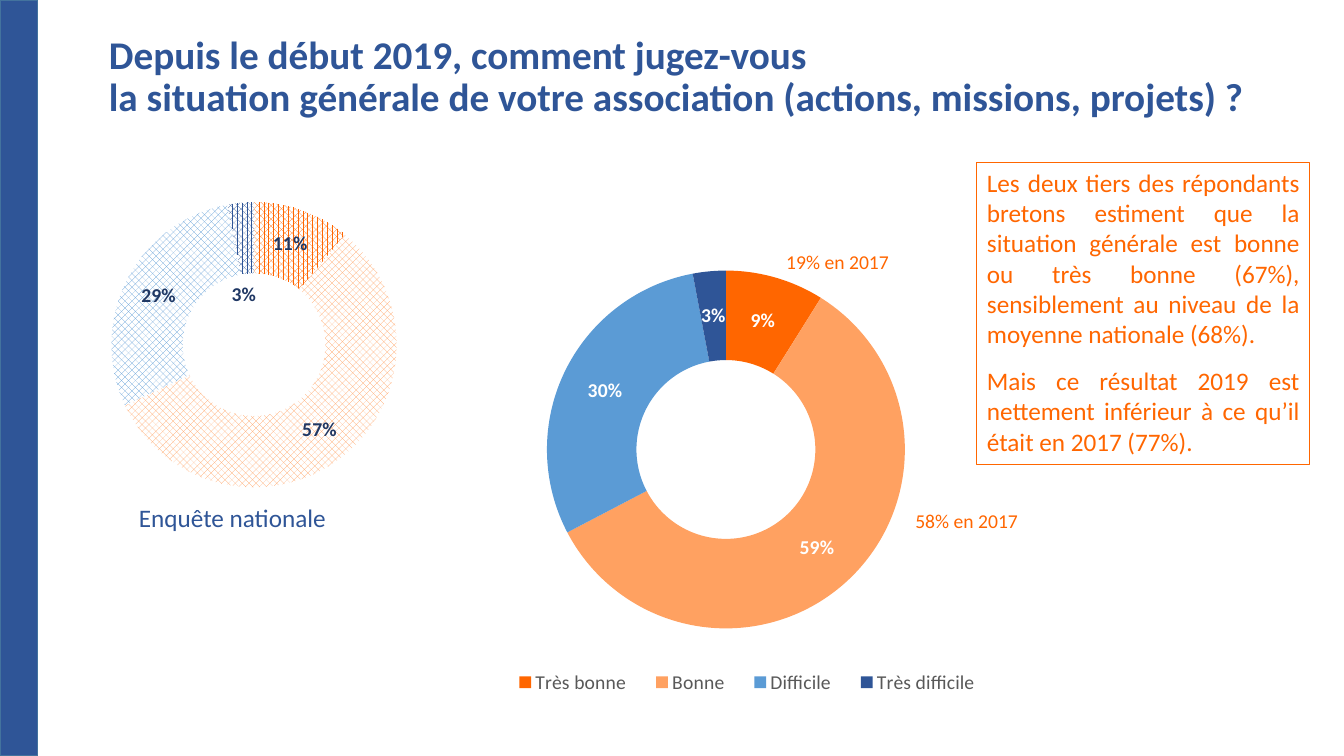
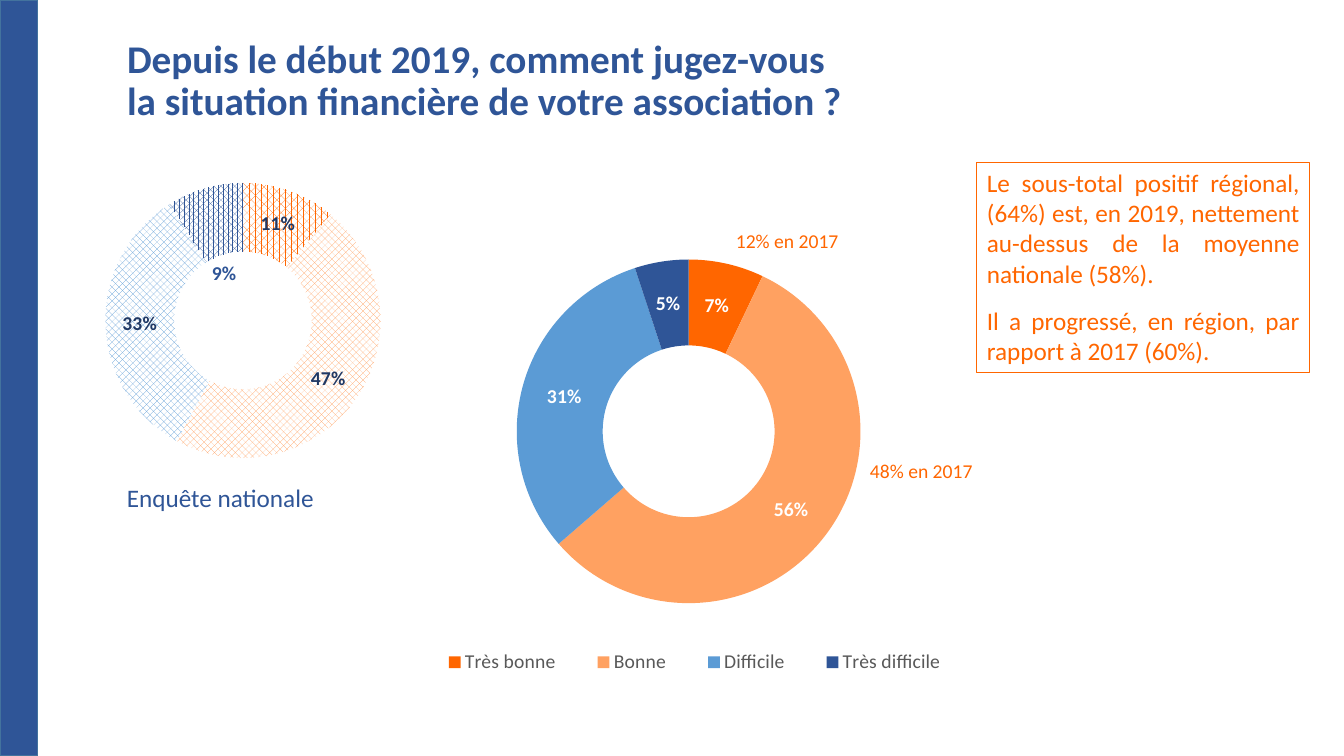
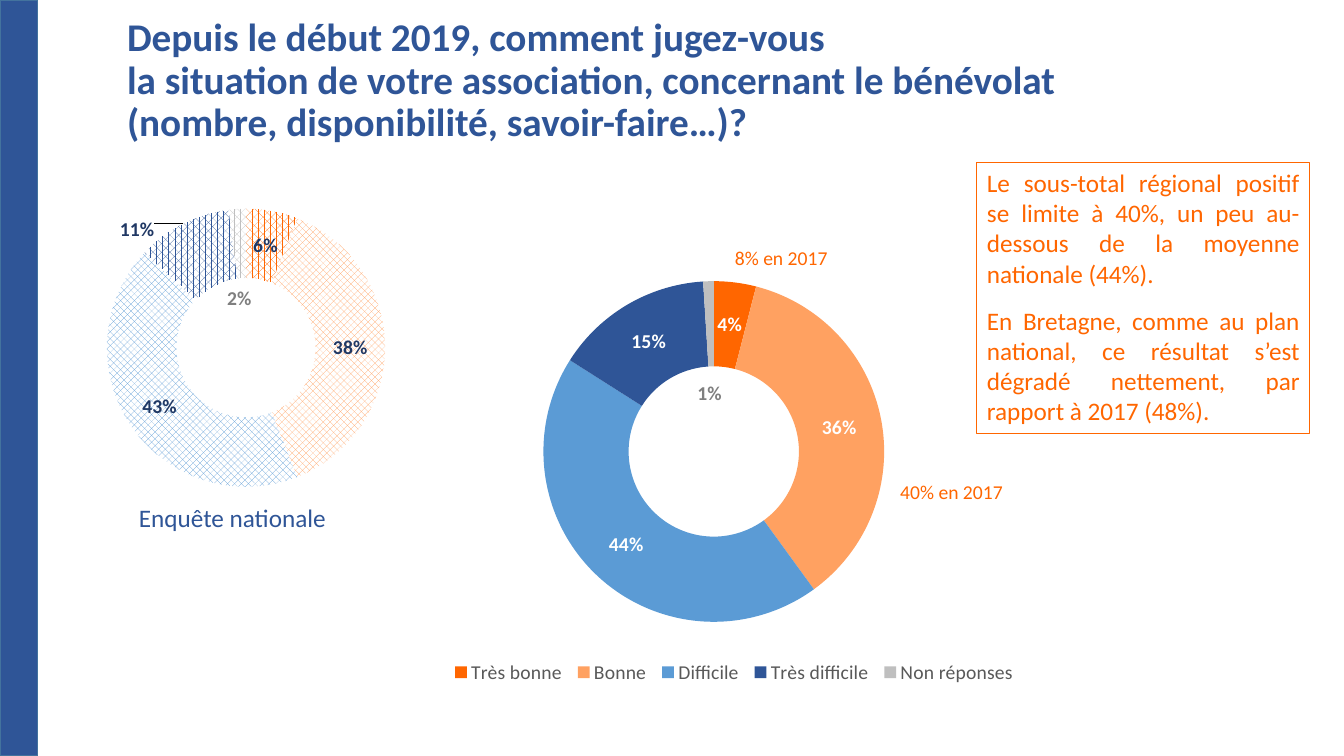
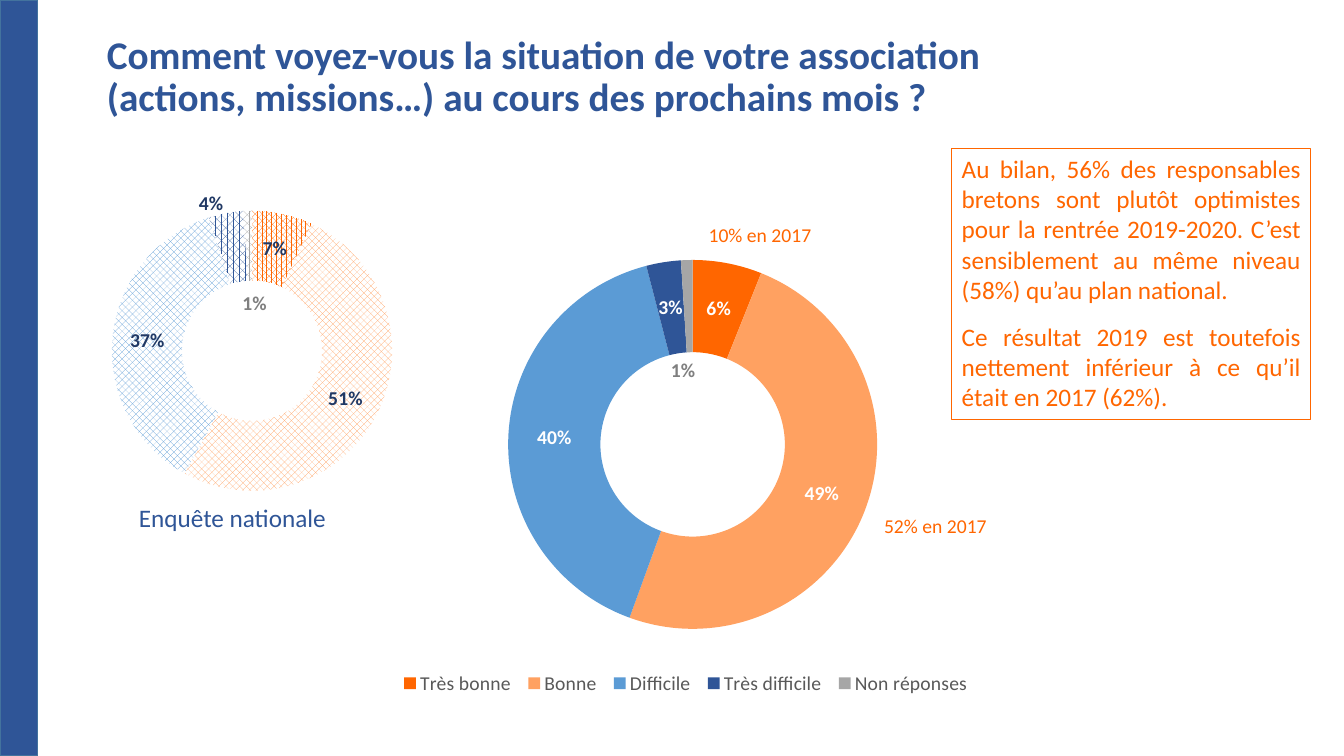
from dataclasses import dataclass
from typing import Optional

from pptx import Presentation
from pptx.chart.chart import Chart
from pptx.chart.data import CategoryChartData
from pptx.dml.color import RGBColor
from pptx.enum.chart import XL_CHART_TYPE as ChartType, XL_LEGEND_POSITION as LegendPosition
from pptx.enum.dml import MSO_PATTERN_TYPE as Pattern
from pptx.enum.shapes import MSO_SHAPE as Shape
from pptx.enum.text import MSO_ANCHOR as Anchor, MSO_AUTO_SIZE as AutoSize, PP_ALIGN as Align
from pptx.oxml import parse_xml
from pptx.oxml.ns import nsdecls
from pptx.slide import Slide
from pptx.text.text import Font
from pptx.util import Inches, Pt

NAVY = RGBColor(0x2F, 0x55, 0x97)
DARK_NAVY = RGBColor(0x20, 0x38, 0x64)
BAND_EDGE = RGBColor(0x43, 0x73, 0x9E)
BLUE = RGBColor(0x5B, 0x9B, 0xD5)
ORANGE = RGBColor(0xFF, 0x66, 0x00)
PEACH = RGBColor(0xFF, 0xA1, 0x61)
WHITE = RGBColor(0xFF, 0xFF, 0xFF)
LEGEND_GREY = RGBColor(0x59, 0x59, 0x59)
LABEL_GREY = RGBColor(0x7F, 0x7F, 0x7F)
LIGHT_GREY = RGBColor(0xBF, 0xBF, 0xBF)
MID_GREY = RGBColor(0xA6, 0xA6, 0xA6)

FONT = "Calibri"
ANSWERS = ("Très bonne", "Bonne", "Difficile", "Très difficile", "Non réponses")
ANSWER_COLORS = (ORANGE, PEACH, BLUE, NAVY)
PERCENT = '0"%";;'
P50, P60, P70 = Pattern.PERCENT_50, Pattern.PERCENT_60, Pattern.PERCENT_70


@dataclass(frozen=True)
class Box:
    """A rectangle in inches."""

    left: float
    top: float
    width: float
    height: float

    def lengths(self) -> tuple[Inches, Inches, Inches, Inches]:
        """Return the four sides as lengths."""
        return Inches(self.left), Inches(self.top), Inches(self.width), Inches(self.height)

    def within(self, frame: "Box") -> dict[str, float]:
        """Return this rectangle as fractions of a frame."""
        return {
            "x": (self.left - frame.left) / frame.width,
            "y": (self.top - frame.top) / frame.height,
            "w": self.width / frame.width,
            "h": self.height / frame.height,
        }


@dataclass(frozen=True)
class MovedLabel:
    """A percentage moved away from its ring segment, in inches."""

    answer: int
    right: float
    down: float
    color: RGBColor


@dataclass(frozen=True)
class Ring:
    """A doughnut of answers with its frame, centre and diameter."""

    values: tuple[int, ...]
    frame: Box
    center: tuple[float, float]
    diameter: float
    label_color: RGBColor = WHITE
    patterns: tuple[Pattern, ...] = ()
    moved: tuple[MovedLabel, ...] = ()
    legend: Optional[Box] = None

    def plot(self) -> Box:
        """Return the square around the ring."""
        x, y = self.center
        radius = self.diameter / 2
        return Box(x - radius, y - radius, self.diameter, self.diameter)


@dataclass(frozen=True)
class Note:
    """A short text at a left and top position."""

    text: str
    left: float
    top: float


@dataclass(frozen=True)
class Question:
    """One survey question with national and regional results."""

    title: tuple[str, ...]
    title_box: Box
    national: Ring
    regional: Ring
    caption: Note
    past_results: tuple[Note, Note]
    comment: tuple[str, str]
    comment_box: Box
    no_answer_color: RGBColor = LIGHT_GREY


def set_font(font: Font, size: float, color: RGBColor, bold: bool = False) -> None:
    """Apply the common typeface with a size and colour."""
    font.name = FONT
    font.size = Pt(size)
    font.bold = bold
    font.color.rgb = color


def set_layout(parent, index: int, inner: bool = False, **fractions: float) -> None:
    """Give a chart part a manual layout."""
    for old in parent.xpath("c:layout"):
        parent.remove(old)
    target = '<c:layoutTarget val="inner"/>' if inner else ""
    edges = "".join(f'<c:{key}Mode val="edge"/>' for key in "xy" if "w" in fractions)
    values = "".join(f'<c:{key} val="{value:.4f}"/>' for key, value in fractions.items())
    parent.insert(index, parse_xml(
        f'<c:layout {nsdecls("c")}><c:manualLayout>{target}{edges}{values}</c:manualLayout></c:layout>'
    ))


def add_legend(chart: Chart, box: Box, frame: Box) -> None:
    """Place the legend below the ring."""
    chart.has_legend = True
    chart.legend.position = LegendPosition.TOP
    chart.legend.include_in_layout = False
    set_font(chart.legend.font, 14, LEGEND_GREY)
    set_layout(chart.element.xpath(".//c:legend")[0], 1, **box.within(frame))


def add_ring(slide: Slide, ring: Ring, no_answer_color: RGBColor) -> None:
    """Draw a doughnut with its percentages."""
    data = CategoryChartData(number_format=PERCENT)
    data.categories = ANSWERS[:len(ring.values)]
    data.add_series("Series 1", ring.values)
    chart = slide.shapes.add_chart(ChartType.DOUGHNUT, *ring.frame.lengths(), data).chart
    chart.has_title = False
    chart.has_legend = False
    chart.font.name = FONT
    chart.font.size = Pt(14)
    set_layout(chart.element.xpath(".//c:plotArea")[0], 0, True, **ring.plot().within(ring.frame))

    plot = chart.plots[0]
    plot.vary_by_categories = True
    series = plot.series[0]
    labels = series.data_labels
    labels.show_value = True
    labels.number_format = PERCENT
    labels.number_format_is_linked = False
    set_font(labels.font, 14, ring.label_color, True)

    colors = (*ANSWER_COLORS, no_answer_color)
    for index in range(len(ring.values)):
        segment = series.points[index].format
        segment.line.fill.background()
        if ring.patterns:
            segment.fill.patterned()
            segment.fill.pattern = ring.patterns[index]
            segment.fill.fore_color.rgb = colors[index]
            segment.fill.back_color.rgb = WHITE
        else:
            segment.fill.solid()
            segment.fill.fore_color.rgb = colors[index]

    for label in ring.moved:
        set_font(series.points[label.answer].data_label.font, 14, label.color, True)
        element = chart.element.xpath(f'.//c:dLbl[c:idx/@val="{label.answer}"]')[0]
        set_layout(element, 1, x=label.right / ring.frame.width, y=label.down / ring.frame.height)
        element.insert(2, parse_xml(
            f'<c:numFmt {nsdecls("c")} formatCode="0&quot;%&quot;" sourceLinked="0"/>'
        ))
    if ring.legend:
        add_legend(chart, ring.legend, ring.frame)


def add_title(slide: Slide, lines: tuple[str, ...], box: Box) -> None:
    """Fill and place the title placeholder."""
    title = slide.shapes.title
    title.left, title.top, title.width, title.height = box.lengths()
    frame = title.text_frame
    frame.word_wrap = True
    frame.auto_size = AutoSize.NONE
    frame.vertical_anchor = Anchor.MIDDLE
    paragraph = frame.paragraphs[0]
    paragraph.alignment = Align.LEFT
    paragraph.line_spacing = 0.9
    for index, line in enumerate(lines):
        if index:
            paragraph.add_line_break()
        run = paragraph.add_run()
        run.text = line
        set_font(run.font, 28, NAVY, True)


def add_note(slide: Slide, note: Note, size: float, color: RGBColor, width: float) -> None:
    """Write a short text next to a ring."""
    box = Box(note.left, note.top, width, 0.34 if size < 18 else 0.4)
    frame = slide.shapes.add_textbox(*box.lengths()).text_frame
    frame.word_wrap = True
    run = frame.paragraphs[0].add_run()
    run.text = note.text
    set_font(run.font, size, color)


def add_comment(slide: Slide, texts: tuple[str, str], box: Box) -> None:
    """Draw the outlined comment with justified paragraphs."""
    comment = slide.shapes.add_shape(Shape.RECTANGLE, *box.lengths())
    comment.shadow.inherit = False
    comment.fill.background()
    comment.line.color.rgb = ORANGE
    comment.line.width = Pt(0.75)
    frame = comment.text_frame
    frame.word_wrap = True
    frame.vertical_anchor = Anchor.TOP
    for index, text in enumerate(texts):
        paragraph = frame.add_paragraph() if index else frame.paragraphs[0]
        paragraph.alignment = Align.JUSTIFY
        paragraph.space_before = Pt(12 * index)
        run = paragraph.add_run()
        run.text = text
        set_font(run.font, 18, ORANGE)


def add_master_band(deck: Presentation, slide: Slide) -> None:
    """Put the side band on the slide master."""
    band = slide.shapes.add_shape(Shape.RECTANGLE, 0, 0, Inches(0.37), deck.slide_height)
    band.shadow.inherit = False
    band.fill.solid()
    band.fill.fore_color.rgb = NAVY
    band.line.color.rgb = BAND_EDGE
    band.line.width = Pt(1)
    deck.slide_master.shapes.element.insert(2, band.element)


def add_question(slide: Slide, question: Question) -> None:
    """Draw one question slide."""
    add_title(slide, question.title, question.title_box)
    for ring in (question.regional, question.national):
        add_ring(slide, ring, question.no_answer_color)
    add_note(slide, question.caption, 18, NAVY, 2.46)
    for result in question.past_results:
        add_note(slide, result, 14, ORANGE, 2.07)
    add_comment(slide, question.comment, question.comment_box)


CAPTION = Note("Enquête nationale", 1.28, 4.93)

QUESTIONS = (
    Question(
        title=("Depuis le début 2019, comment jugez-vous",
               "la situation générale de votre association (actions, missions, projets) ?"),
        title_box=Box(0.98, 0.07, 12.1, 1.4),
        national=Ring((11, 57, 29, 3), Box(-0.39, 1.79, 5.24, 3.34), (2.52, 3.42), 2.83,
                      DARK_NAVY, (P70, P50, P50, P70), (MovedLabel(3, 0, 0.56, DARK_NAVY),)),
        regional=Ring((9, 59, 30, 3), Box(4.05, 2.26, 6.56, 4.84), (7.2, 4.46), 3.55,
                      legend=Box(4.92, 6.59, 4.98, 0.36)),
        caption=CAPTION,
        past_results=(Note("19% en 2017", 7.7, 2.43), Note("58% en 2017", 8.98, 5)),
        comment=("Les deux tiers des répondants bretons estiment que la situation générale est bonne "
                 "ou très bonne (67%), sensiblement au niveau de la moyenne nationale (68%).",
                 "Mais ce résultat 2019 est nettement inférieur à ce qu’il était en 2017 (77%)."),
        comment_box=Box(9.69, 1.61, 3.3, 3),
    ),
    Question(
        title=("Depuis le début 2019, comment jugez-vous",
               "la situation financière de votre association ?"),
        title_box=Box(1.16, 0.11, 10.09, 1.4),
        national=Ring((11, 47, 33, 9, 0), Box(-0.26, 1.64, 5.24, 2.98), (2.41, 3.18), 2.73,
                      DARK_NAVY, (P60, P50, P50, P70, P50), (MovedLabel(3, 0.1, 0.52, NAVY),)),
        regional=Ring((7, 56, 31, 5), Box(4.05, 2.26, 7.44, 4.83), (6.83, 4.28), 3.41,
                      legend=Box(4.1, 6.39, 5.58, 0.36)),
        caption=Note("Enquête nationale", 1.16, 4.74),
        past_results=(Note("12% en 2017", 7.2, 2.22), Note("48% en 2017", 8.53, 4.5)),
        comment=("Le sous-total positif régional, (64%) est, en 2019, nettement au-dessus de la "
                 "moyenne nationale (58%).",
                 "Il a progressé, en région, par rapport à 2017 (60%)."),
        comment_box=Box(9.69, 1.61, 3.3, 2.09),
    ),
    Question(
        title=("Depuis le début 2019, comment jugez-vous",
               "la situation de votre association, concernant le bénévolat "
               "(nombre, disponibilité, savoir-faire…)?"),
        title_box=Box(1.16, 0.11, 10.09, 1.4),
        national=Ring((6, 38, 43, 11, 2), Box(-0.43, 1.95, 5.24, 3.17), (2.44, 3.45), 2.76,
                      DARK_NAVY, (P60, P50, P50, P60, P60),
                      (MovedLabel(3, -0.61, -0.25, DARK_NAVY), MovedLabel(4, 0, 0.55, LABEL_GREY))),
        regional=Ring((4, 36, 44, 15, 1), Box(3.48, 2.17, 7.42, 4.82), (7.08, 4.48), 3.38,
                      moved=(MovedLabel(4, 0, 0.69, LABEL_GREY),),
                      legend=Box(4.42, 6.49, 5.72, 0.36)),
        caption=CAPTION,
        past_results=(Note("8% en 2017", 7.19, 2.39), Note("40% en 2017", 8.83, 4.71)),
        comment=("Le sous-total régional positif se limite à 40%, un peu au-dessous de la moyenne "
                 "nationale (44%).",
                 "En Bretagne, comme au plan national, ce résultat s’est dégradé nettement, "
                 "par rapport à 2017 (48%)."),
        comment_box=Box(9.69, 1.61, 3.3, 2.69),
    ),
    Question(
        title=("Comment voyez-vous la situation de votre association "
               "(actions, missions…) au cours des prochains mois ?",),
        title_box=Box(0.96, 0.07, 10.09, 1.4),
        national=Ring((7, 51, 37, 4, 1), Box(-0.47, 1.34, 5.7, 3.88), (2.5, 3.48), 2.78,
                      DARK_NAVY, (P70, P50, P50, P60, P60),
                      (MovedLabel(3, -0.21, -0.44, DARK_NAVY), MovedLabel(4, 0.06, 0.58, LABEL_GREY))),
        regional=Ring((6, 49, 40, 3, 1), Box(2.92, 2.43, 7.57, 4.67), (6.87, 4.41), 3.66,
                      moved=(MovedLabel(4, -0.05, 0.64, LABEL_GREY),),
                      legend=Box(3.9, 6.6, 5.8, 0.36)),
        caption=CAPTION,
        past_results=(Note("10% en 2017", 6.93, 2.16), Note("52% en 2017", 8.67, 5.05)),
        comment=("Au bilan, 56% des responsables bretons sont plutôt optimistes pour la rentrée "
                 "2019-2020. C’est sensiblement au même niveau (58%) qu’au plan national.",
                 "Ce résultat 2019 est toutefois nettement inférieur à ce qu’il était en 2017 (62%)."),
        comment_box=Box(9.44, 1.47, 3.56, 2.69),
        no_answer_color=MID_GREY,
    ),
)


def main() -> None:
    """Build and save the deck."""
    deck = Presentation()
    deck.slide_width, deck.slide_height = Inches(13.33), Inches(7.5)
    title_only = deck.slide_layouts[5]
    for index, question in enumerate(QUESTIONS):
        slide = deck.slides.add_slide(title_only)
        if index == 0:
            add_master_band(deck, slide)
        add_question(slide, question)
    deck.save("out.pptx")


if __name__ == "__main__":
    main()
